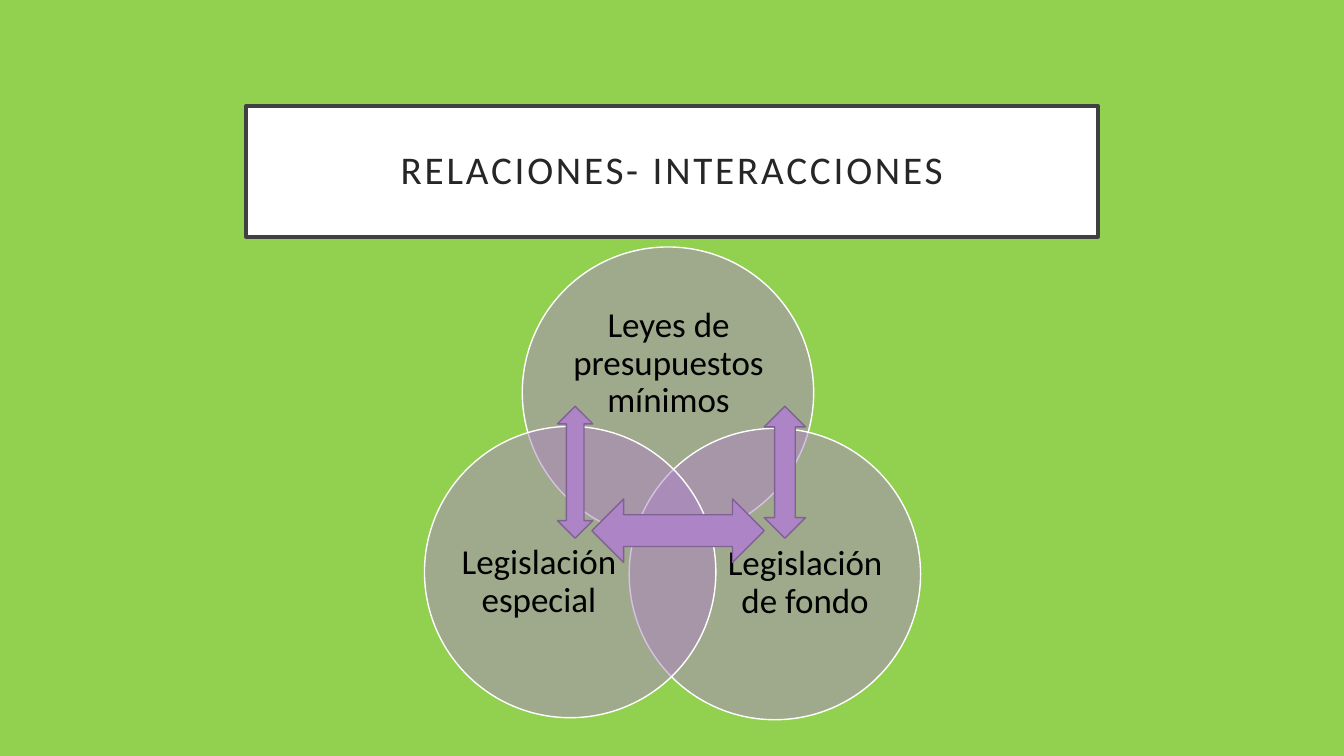
from lxml import etree
from pptx import Presentation
from pptx import util as u
from pptx.dml.color import RGBColor
from pptx.enum import shapes, text
from pptx.oxml.ns import qn

HUES = {"green": "92D050", "white": "FFFFFF", "frame": "404040", "title": "262626",
        "black": "000000", "lilac": "AD84C6", "edge": "806292"}
KINDS = shapes.MSO_SHAPE


class Deck:
    def __init__(self):
        self.prs = Presentation()
        self.prs.slide_width = u.Inches(13.33)
        self.prs.slide_height = u.Inches(7.5)
        self.slide = self.prs.slides.add_slide(self.prs.slide_layouts[6])
        self.font = "Calibri"
        self.tint(self.slide.background.fill, "green")

    def tint(self, fill, hue):
        fill.solid()
        fill.fore_color.rgb = RGBColor.from_string(HUES[hue])

    def shape(self, kind, box, hue, edge, width=1):
        item = self.slide.shapes.add_shape(kind, *map(u.Inches, box))
        item.shadow.inherit = False
        self.tint(item.fill, hue)
        self.tint(item.line.fill, edge)
        item.line.width = u.Pt(width)
        return item

    def letter(self, item, words, size, hue, inset=0):
        """Fill a shape with one centred paragraph and return its run."""
        frame = item.text_frame
        frame.word_wrap = True
        frame.vertical_anchor = text.MSO_ANCHOR.MIDDLE
        frame.margin_left = frame.margin_right = u.Inches(inset)
        frame.margin_top = frame.margin_bottom = u.Inches(inset)
        para = frame.paragraphs[0]
        para.alignment = text.PP_ALIGN.CENTER
        para.line_spacing = 0.9
        run = para.add_run()
        run.text = words
        run.font.name = self.font
        run.font.size = u.Pt(size)
        run.font.color.rgb = RGBColor.from_string(HUES[hue])
        return run

    def title(self, words, box):
        item = self.shape(KINDS.RECTANGLE, box, "white", "frame", 2.5)
        run = self.letter(item, words, 28, "title", 0.2)
        run.font._element.set("spc", "200")

    def circle(self, left, top, size=2.89):
        item = self.shape(KINDS.OVAL, (left, top, size, size), "lilac", "white")
        color = item._element.spPr.find(qn("a:solidFill"))[0]
        etree.SubElement(color, qn("a:alpha"), val="50000")

    def label(self, words, box):
        item = self.slide.shapes.add_textbox(*map(u.Inches, box))
        self.letter(item, words, 25, "black")

    def arrow(self, kind, box):
        self.shape(kind, box, "lilac", "edge")


def main():
    deck = Deck()
    deck.title("RELACIONES- INTERACCIONES", (2.44, 1.05, 8.45, 1.3))

    laws = [
        ((5.18, 2.45), "Leyes de presupuestos mínimos", (5.57, 2.96, 2.12, 1.3)),
        ((6.24, 4.25), "Legislación de fondo", (7.12, 4.99, 1.73, 1.59)),
        ((4.21, 4.23), "Legislación especial", (4.48, 4.98, 1.73, 1.59)),
    ]
    for spot, words, box in laws:
        deck.circle(*spot)
        deck.label(words, box)

    deck.arrow(KINDS.LEFT_RIGHT_ARROW, (5.87, 4.95, 1.71, 0.63))
    for left, width in ((5.53, 0.35), (7.58, 0.41)):
        deck.arrow(KINDS.UP_DOWN_ARROW, (left, 4.03, width, 1.31))

    deck.prs.save("out.pptx")


if __name__ == "__main__":
    main()
